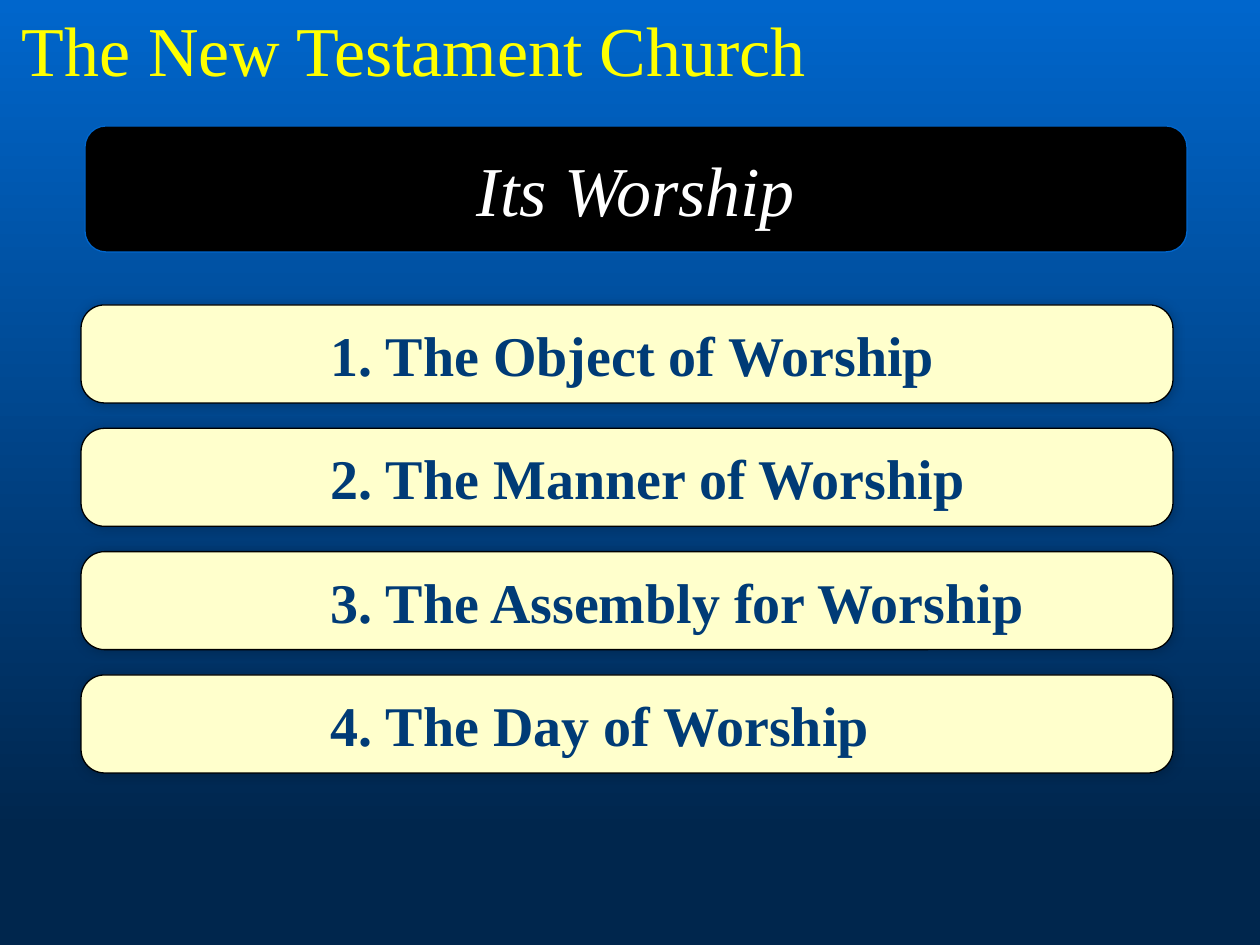
from pptx import Presentation
from pptx.dml.color import RGBColor
from pptx.enum.shapes import MSO_SHAPE as Shape
from pptx.enum.text import MSO_ANCHOR as Anchor, PP_ALIGN as Align
from pptx.oxml import parse_xml
from pptx.oxml.ns import nsdecls, qn
from pptx.util import Emu, Pt

COLORS = {"sky": "0066CC", "night": "00264D", "title": "FFFF00", "black": "000000",
          "white": "FFFFFF", "cream": "FFFFCC", "navy": "003B76"}
FONT = "Times New Roman"
TOPICS = ["1. The Object of Worship", "2. The Manner of Worship",
          "3. The Assembly for Worship", "4. The Day of Worship"]


def px(length):
    """Turn pixels into EMU."""
    return Emu(round(length * 914400 / 126))


def color(name):
    """Look up a named colour."""
    return RGBColor.from_string(COLORS[name])


def write(shape, text, size, tint, align, bold=False, italic=False):
    """Set one line of styled text and return its span."""
    para = shape.text_frame.paragraphs[0]
    para.text = text
    para.alignment = align
    span = para.runs[0]
    font = span.font
    font.name, font.size, font.bold, font.italic = FONT, Pt(size), bold, italic
    font.color.rgb = color(tint)
    return span


def add_panel(page, box, fill, line, corner):
    """Add a rounded panel with vertically centred text."""
    panel = page.shapes.add_shape(Shape.ROUNDED_RECTANGLE, *map(px, box))
    panel.adjustments[0] = corner
    panel.shadow.inherit = False
    panel.fill.solid()
    panel.fill.fore_color.rgb = color(fill)
    panel.line.color.rgb = color(line)
    panel.line.width = Pt(0.75)
    panel.text_frame.word_wrap = True
    panel.text_frame.vertical_anchor = Anchor.MIDDLE
    return panel


def add_glow(panel):
    """Put a soft shadow around a panel."""
    effects = panel._element.spPr.find(qn("a:effectLst"))
    effects.append(parse_xml(
        f'<a:outerShdw {nsdecls("a")} blurRad="{Pt(6)}" dist="0" dir="13500000" algn="ctr">'
        f'<a:srgbClr val="{COLORS["black"]}"><a:alpha val="20000"/></a:srgbClr></a:outerShdw>'))


def paint_background(page):
    """Fill the page with a downward gradient."""
    fill = page.background.fill
    fill.gradient()
    fill.gradient_angle = 270
    for stop, (position, name) in zip(fill.gradient_stops, [(0, "sky"), (0.88, "night")]):
        stop.position = position
        stop.color.rgb = color(name)


def add_title(page, box):
    """Add the outlined page title."""
    title = page.shapes.add_textbox(*map(px, box))
    title.text_frame.word_wrap = False
    span = write(title, "The New Testament Church", 40, "title", Align.CENTER)
    span._r.get_or_add_rPr().insert(0, parse_xml(
        f'<a:ln {nsdecls("a")} w="{Pt(0.75)}"><a:solidFill>'
        f'<a:srgbClr val="{COLORS["sky"]}"/></a:solidFill></a:ln>'))


def add_banner(page, box):
    """Add the black subject banner."""
    banner = add_panel(page, box, "black", "sky", 0.1667)
    write(banner, "Its Worship", 40, "white", Align.CENTER, italic=True)


def add_topics(page, box, bar_height):
    """Spread the topic bars evenly down the box."""
    left, top, width, height = box
    pitch = (height - bar_height) / (len(TOPICS) - 1)
    for index, topic in enumerate(TOPICS):
        bar = add_panel(page, (left, top + index * pitch, width, bar_height),
                        "cream", "black", 0.24)
        add_glow(bar)
        bar.text_frame.margin_left = px(243)
        write(bar, topic, 32, "navy", Align.LEFT, bold=True)


def main():
    """Build and save the deck."""
    deck = Presentation()
    deck.slide_width, deck.slide_height = px(1260), px(945)
    page = deck.slides.add_slide(deck.slide_layouts[6])
    paint_background(page)
    add_title(page, (5, 0, 818, 97))
    add_banner(page, (85, 126, 1102, 126))
    add_topics(page, (81, 305, 1092, 468), 98)
    deck.save("out.pptx")


if __name__ == "__main__":
    main()
